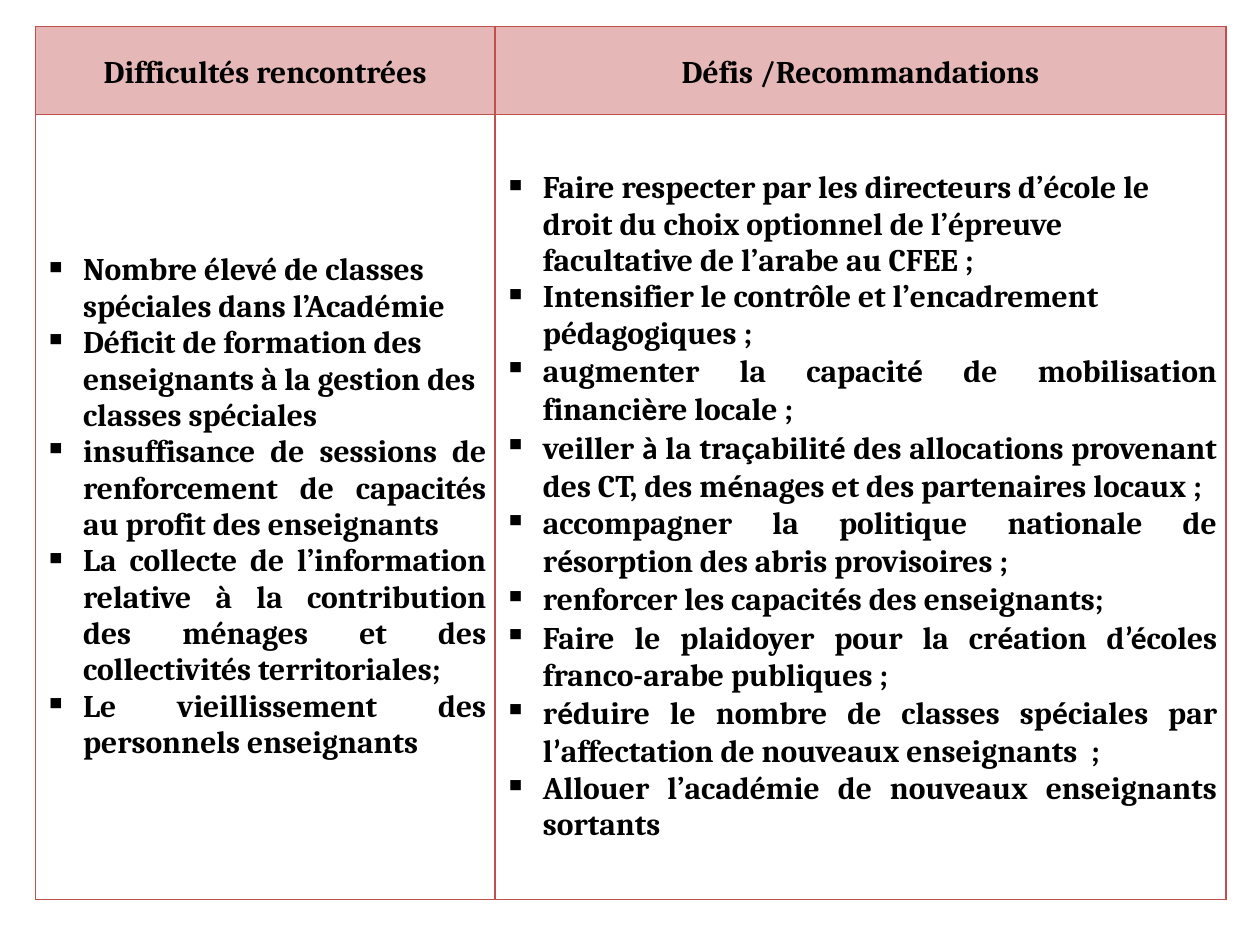
from itertools import groupby

from lxml.etree import SubElement as Sub
from pptx import Presentation
from pptx.dml.color import RGBColor as Rgb
from pptx.enum.text import MSO_ANCHOR as Anchor, PP_ALIGN as Align
from pptx.oxml.ns import qn
from pptx.util import Inches, Pt

COLORS = {"text": "000000", "header": "E5B8B7", "border": "C0504D"}
COLUMNS = [3.65, 5.8]
ROWS = [0.7, 6.23]
INDENT = Inches(0.31)
CELL_FORMAT = {
    "vertical_anchor": Anchor.MIDDLE,
    "margin_left": Inches(0.07), "margin_right": Inches(0.07),
    "margin_top": 0, "margin_bottom": 0,
}
FONT_FORMAT = {"size": Pt(18), "bold": True}
ACCENTS = "éèàç’"  # set in Calibri where a paragraph mixes fonts

HEADERS = ["Difficultés rencontrées", "Défis /Recommandations"]
# Each item: text, alignment, whether its accents take the second font
DIFFICULTIES = [
    ("Nombre élevé de classes spéciales dans l’Académie", Align.LEFT, False),
    ("Déficit de formation des enseignants à la gestion des classes spéciales", Align.LEFT, False),
    ("insuffisance de sessions de renforcement de capacités au profit des enseignants",
     Align.JUSTIFY, False),
    ("La collecte de l’information relative à la contribution des ménages et des "
     "collectivités territoriales;", Align.JUSTIFY, False),
    ("Le vieillissement des personnels enseignants", Align.JUSTIFY, False),
]
CHALLENGES = [
    ("Faire respecter par les directeurs d’école le droit du choix optionnel de l’épreuve "
     "facultative de l’arabe au CFEE ;", Align.LEFT, False),
    ("Intensifier le contrôle et l’encadrement pédagogiques ;", Align.LEFT, False),
    ("augmenter la capacité de mobilisation financière locale ;", Align.JUSTIFY, True),
    ("veiller à la traçabilité des allocations provenant des CT, des ménages et des "
     "partenaires locaux ;", Align.JUSTIFY, True),
    ("accompagner la politique nationale de résorption des abris provisoires ;",
     Align.JUSTIFY, True),
    ("renforcer les capacités des enseignants;", Align.JUSTIFY, True),
    ("Faire le plaidoyer pour la création d’écoles franco-arabe publiques ;",
     Align.JUSTIFY, True),
    ("réduire le nombre de classes spéciales par l’affectation de nouveaux enseignants  ;",
     Align.JUSTIFY, True),
    ("Allouer l’académie de nouveaux enseignants sortants", Align.JUSTIFY, False),
]


def add_spans(para, text, mixed=False):
    """Write the text, splitting it where the font changes."""
    for accented, letters in groupby(text, lambda letter: mixed and letter in ACCENTS):
        span = para.add_run()
        span.text = "".join(letters)
        span.font.name = "Calibri" if accented else "Cambria"
        span.font.color.rgb = Rgb.from_string(COLORS["text"])
        for name, value in FONT_FORMAT.items():
            setattr(span.font, name, value)


def format_cell(cell, fill=None):
    for name, value in CELL_FORMAT.items():
        setattr(cell, name, value)
    properties = cell._tc.get_or_add_tcPr()
    for side in ("lnL", "lnR", "lnT", "lnB"):
        line = Sub(properties, qn(f"a:{side}"), w=str(Pt(1)))
        Sub(Sub(line, qn("a:solidFill")), qn("a:srgbClr"), val=COLORS["border"])
    if fill:
        cell.fill.solid()
        cell.fill.fore_color.rgb = Rgb.from_string(fill)
    else:
        cell.fill.background()


def fill_header(cell, text):
    format_cell(cell, COLORS["header"])
    para = cell.text_frame.paragraphs[0]
    para.alignment, para.line_spacing = Align.CENTER, 1.15
    add_spans(para, text)


def fill_list(cell, items):
    format_cell(cell)
    frame = cell.text_frame
    for number, (text, alignment, mixed) in enumerate(items):
        para = frame.add_paragraph() if number else frame.paragraphs[0]
        properties = para._p.get_or_add_pPr()
        properties.set("marL", str(INDENT))
        properties.set("indent", str(-INDENT))
        Sub(properties, qn("a:buChar"), char="▪")
        para.alignment = alignment
        add_spans(para, text, mixed)


def add_summary_table(page, left, top):
    box = page.shapes.add_table(len(ROWS), len(COLUMNS), Inches(left), Inches(top),
                                Inches(sum(COLUMNS)), Inches(sum(ROWS)))
    table = box.table
    table.first_row = table.horz_banding = False
    for column, width in zip(table.columns, COLUMNS):
        column.width = Inches(width)
    for row, height in zip(table.rows, ROWS):
        row.height = Inches(height)
    for index, (header, items) in enumerate(zip(HEADERS, (DIFFICULTIES, CHALLENGES))):
        fill_header(table.cell(0, index), header)
        fill_list(table.cell(1, index), items)


def main():
    deck = Presentation()
    deck.slide_width, deck.slide_height = Inches(10), Inches(7.5)
    page = deck.slides.add_slide(deck.slide_layouts[6])
    add_summary_table(page, 0.28, 0.21)
    deck.save("out.pptx")


if __name__ == "__main__":
    main()
